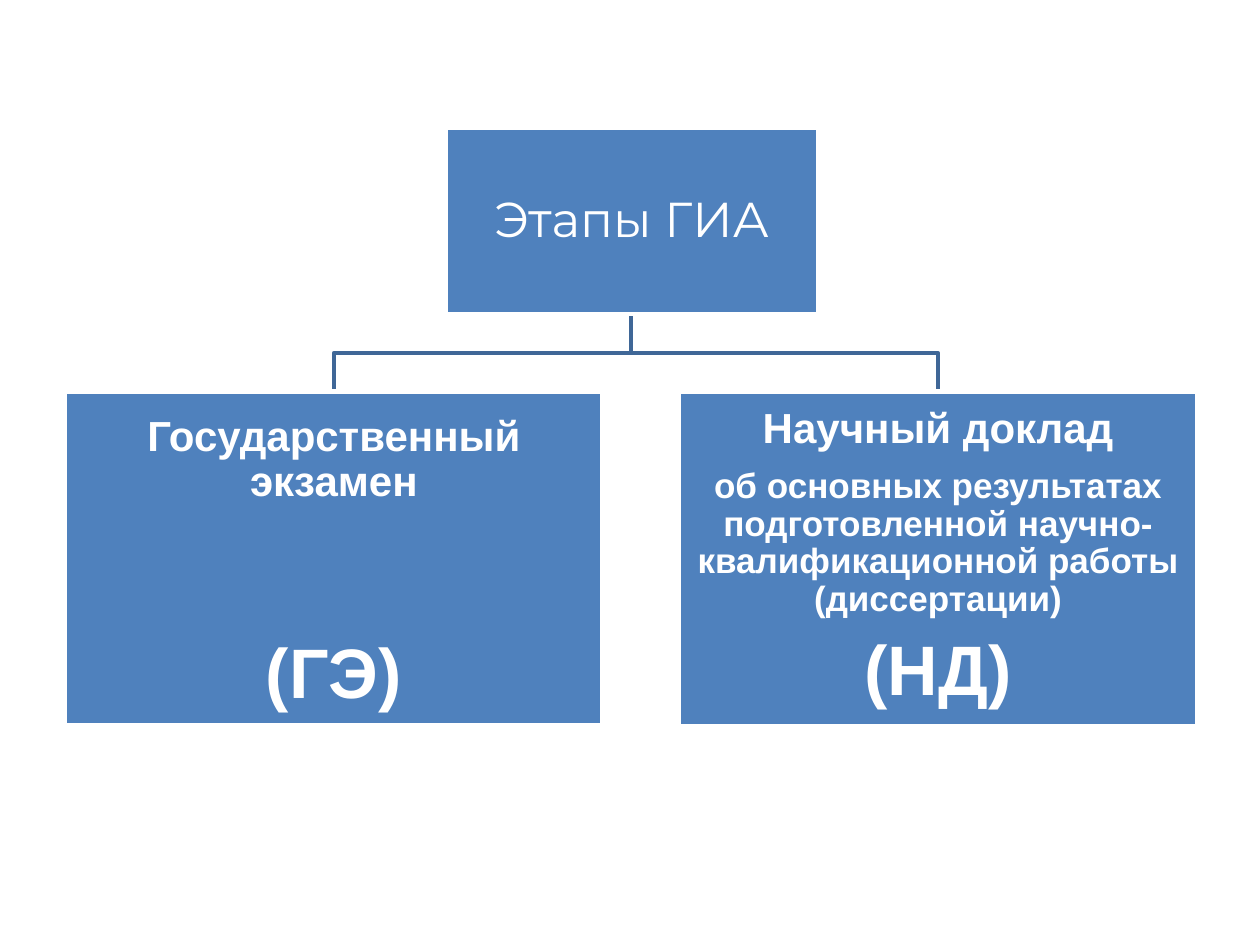
from pptx import Presentation
from pptx import util as u
from pptx.dml.color import RGBColor
from pptx.enum import shapes, text

COLORS = {"box": "4F81BD", "branch": "3F6797", "light": "FFFFFF"}
TITLE_ONLY = 5


def color(name):
    return RGBColor.from_string(COLORS[name])


def write(frame, words, size, font="Arial", bold=True, before=0, first=False):
    """Put one centred paragraph into the frame."""
    paragraph = frame.paragraphs[0] if first else frame.add_paragraph()
    paragraph.alignment = text.PP_ALIGN.CENTER
    paragraph.line_spacing = 0.9
    paragraph.space_before = u.Pt(before)
    run = paragraph.add_run()
    run.text = words
    run.font.size = u.Pt(size)
    run.font.name = font
    run.font.bold = bold
    run.font.color.rgb = color("light")


class Diagram:
    line_width = u.Pt(2)
    inset = u.Inches(0.02)

    def __init__(self, slide):
        self.slide = slide

    def style_box(self, box, top_inset=0.02):
        box.fill.solid()
        box.fill.fore_color.rgb = color("box")
        box.line.color.rgb = color("light")
        box.line.width = self.line_width
        frame = box.text_frame
        frame.word_wrap = True
        frame.auto_size = text.MSO_AUTO_SIZE.NONE
        frame.vertical_anchor = text.MSO_ANCHOR.MIDDLE
        frame.margin_left = frame.margin_right = frame.margin_bottom = self.inset
        frame.margin_top = u.Inches(top_inset)
        return frame

    def root(self, words, left, top, width, height):
        title = self.slide.shapes.title
        title.left, title.top = u.Inches(left), u.Inches(top)
        title.width, title.height = u.Inches(width), u.Inches(height)
        frame = self.style_box(title)
        write(frame, words, 28, font="Montserrat", bold=False, first=True)

    def stage(self, lines, left, top, width, height, gap, top_inset=0.02):
        """Add a box of (words, size) lines with a gap in points between them."""
        box = self.slide.shapes.add_shape(
            shapes.MSO_SHAPE.RECTANGLE,
            u.Inches(left), u.Inches(top), u.Inches(width), u.Inches(height))
        box.shadow.inherit = False
        frame = self.style_box(box, top_inset)
        for i, (words, size) in enumerate(lines):
            write(frame, words, size, before=gap if i else 0, first=i == 0)

    def branch(self, x_from, y_from, x_to, y_to):
        """Draw a line that goes down, across and down again."""
        middle = (y_from + y_to) / 2
        builder = self.slide.shapes.build_freeform(
            u.Inches(x_from), u.Inches(y_from), scale=1.0)
        corners = [(x_from, middle), (x_to, middle), (x_to, y_to)]
        builder.add_line_segments(
            [(u.Inches(x), u.Inches(y)) for x, y in corners], close=False)
        branch = builder.convert_to_shape()
        branch.shadow.inherit = False
        branch.fill.background()
        branch.line.color.rgb = color("branch")
        branch.line.width = self.line_width


def main():
    deck = Presentation()
    deck.slide_width, deck.slide_height = u.Inches(10), u.Inches(7.5)
    diagram = Diagram(deck.slides.add_slide(deck.slide_layouts[TITLE_ONLY]))

    root_bottom, stage_top = 2.49, 3.11
    line_gap = 0.02
    exam_left, exam_width = 0.52, 4.26
    report_left, report_width = 5.39, 4.11

    diagram.root("Этапы ГИА", 3.54, 1.02, 2.95, 1.47)
    for left, width in ((report_left, report_width), (exam_left, exam_width)):
        diagram.branch(5.01, root_bottom + line_gap,
                       left + width / 2, stage_top - line_gap)
    diagram.stage([("Государственный экзамен", 24), ("(ГЭ)", 40)],
                  exam_left, stage_top, exam_width, 2.64, gap=76, top_inset=0.12)
    diagram.stage([("Научный доклад", 24),
                   ("об основных результатах подготовленной "
                    "научно-квалификационной работы (диссертации)", 20),
                   ("(НД)", 40)],
                  report_left, stage_top, report_width, 2.65, gap=9)
    deck.save("out.pptx")


if __name__ == "__main__":
    main()
